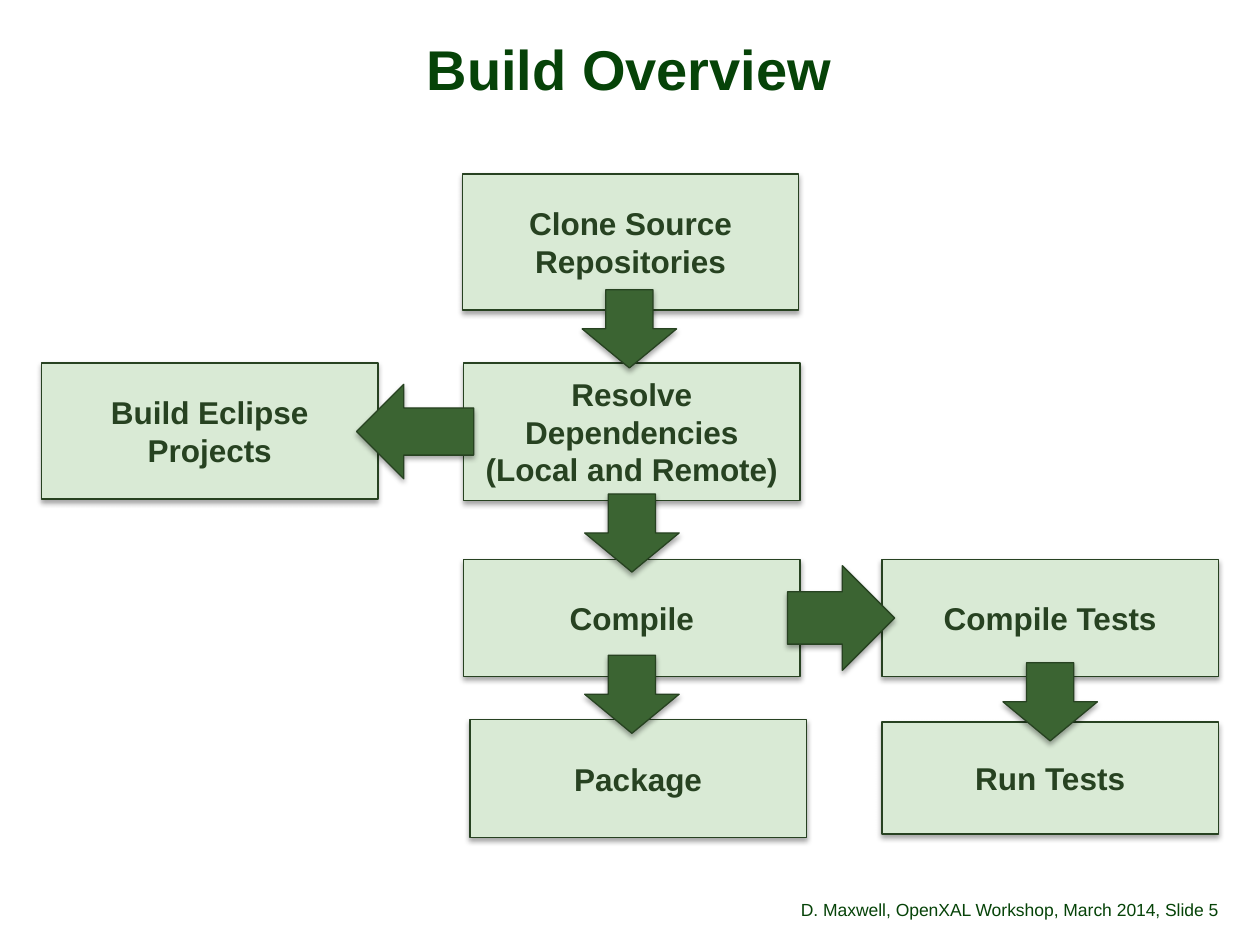
from lxml import etree
from pptx import Presentation
from pptx.dml.color import RGBColor
from pptx.enum.shapes import MSO_SHAPE
from pptx.enum.text import MSO_ANCHOR, PP_ALIGN
from pptx.oxml.ns import qn
from pptx.util import Inches, Pt

RECTANGLE = MSO_SHAPE.RECTANGLE
DOWN, LEFT, RIGHT = MSO_SHAPE.DOWN_ARROW, MSO_SHAPE.LEFT_ARROW, MSO_SHAPE.RIGHT_ARROW
MIDDLE, BOTTOM = MSO_ANCHOR.MIDDLE, MSO_ANCHOR.BOTTOM
ALIGN_LEFT, ALIGN_CENTER, ALIGN_RIGHT = PP_ALIGN.LEFT, PP_ALIGN.CENTER, PP_ALIGN.RIGHT

TITLE_GREEN = RGBColor(0x06, 0x43, 0x08)
DARK_GREEN = RGBColor(0x27, 0x42, 0x21)
ARROW_GREEN = RGBColor(0x3B, 0x64, 0x32)
PALE_GREEN = RGBColor(0xD9, 0xEA, 0xD5)

STEP_WIDTH = 2.67
DOWN_SIZE = (0.75, 0.62)

# Steps: text, left, top, height
STEPS = [
    ("Clone Source\nRepositories", 3.67, 1.38, 1.08),
    ("Resolve\nDependencies\n(Local and Remote)", 3.68, 2.88, 1.09),
    ("Build Eclipse Projects", 0.33, 2.88, 1.08),
    ("Compile", 3.68, 4.44, 0.93),
    ("Compile Tests", 7, 4.44, 0.93),
    ("Package", 3.73, 5.71, 0.94),
    ("Run Tests", 7, 5.73, 0.89),
]

# Arrows: preset, left, top, width, height
ARROWS = [
    (DOWN, 4.62, 2.3, *DOWN_SIZE),
    (LEFT, 2.83, 3.05, 0.93, 0.75),
    (DOWN, 4.64, 3.92, *DOWN_SIZE),
    (DOWN, 4.64, 5.2, *DOWN_SIZE),
    (DOWN, 7.96, 5.26, *DOWN_SIZE),
    (RIGHT, 6.25, 4.49, 0.85, 0.83),
]


def write_text(shape, text, *, size, color, bold=False, align=ALIGN_CENTER,
               anchor=MIDDLE, spacing=None, margins=(0.1, 0.05)):
    frame = shape.text_frame
    frame.word_wrap = True
    frame.vertical_anchor = anchor
    frame.margin_left = frame.margin_right = Inches(margins[0])
    frame.margin_top = frame.margin_bottom = Inches(margins[1])
    frame.text = text
    for paragraph in frame.paragraphs:
        paragraph.alignment = align
        paragraph.line_spacing = spacing
        font = paragraph.font
        font.name, font.size, font.bold = "Arial", Pt(size), bold
        font.color.rgb = color


def add_shadow(shape):
    shape.shadow.inherit = False
    effects = shape._element.spPr.find(qn("a:effectLst"))
    shadow = etree.SubElement(effects, qn("a:outerShdw"), blurRad=str(Pt(3.1)),
                              dist=str(Pt(1.8)), dir="5400000", rotWithShape="0")
    color = etree.SubElement(shadow, qn("a:srgbClr"), val="000000")
    etree.SubElement(color, qn("a:alpha"), val="35000")


def add_block(slide, preset, box, fill):
    shape = slide.shapes.add_shape(preset, *map(Inches, box))
    shape.fill.solid()
    shape.fill.fore_color.rgb = fill
    shape.line.color.rgb = DARK_GREEN
    shape.line.width = Pt(0.75)
    add_shadow(shape)
    return shape


def add_title(slide, box):
    title = slide.shapes.add_textbox(*map(Inches, box))
    write_text(title, "Build Overview", size=32, color=TITLE_GREEN, bold=True,
               spacing=0.88, margins=(0.06, 0.02))


def add_footer(slide, box, number_width):
    left, top, width, height = box
    credit_width = width - number_width
    parts = [
        ("D. Maxwell, OpenXAL Workshop, March 2014", left, credit_width, ALIGN_RIGHT),
        (", Slide 5", left + credit_width, number_width, ALIGN_LEFT),
    ]
    for text, part_left, part_width, align in parts:
        part = slide.shapes.add_textbox(*map(Inches, (part_left, top, part_width, height)))
        write_text(part, text, size=10, color=TITLE_GREEN, align=align,
                   anchor=BOTTOM, spacing=0.9, margins=(0, 0.05))


def add_flow(slide, box):
    """Place steps and arrows, whose positions are relative to the box."""
    origin_left, origin_top = box[:2]
    for text, left, top, height in STEPS:
        step_box = (origin_left + left, origin_top + top, STEP_WIDTH, height)
        step = add_block(slide, RECTANGLE, step_box, PALE_GREEN)
        write_text(step, text, size=18, color=DARK_GREEN, bold=True)
    for preset, left, top, width, height in ARROWS:
        arrow_box = (origin_left + left, origin_top + top, width, height)
        add_block(slide, preset, arrow_box, ARROW_GREEN)


def main():
    presentation = Presentation()
    presentation.slide_width = Inches(10)
    presentation.slide_height = Inches(7.5)
    slide = presentation.slides.add_slide(presentation.slide_layouts[6])
    add_title(slide, (0.08, 0.31, 9.83, 0.53))
    add_footer(slide, (4.53, 6.95, 5.47, 0.4), number_width=0.83)
    add_flow(slide, (0, 0, 10, 7.5))
    presentation.save("out.pptx")


if __name__ == "__main__":
    main()
